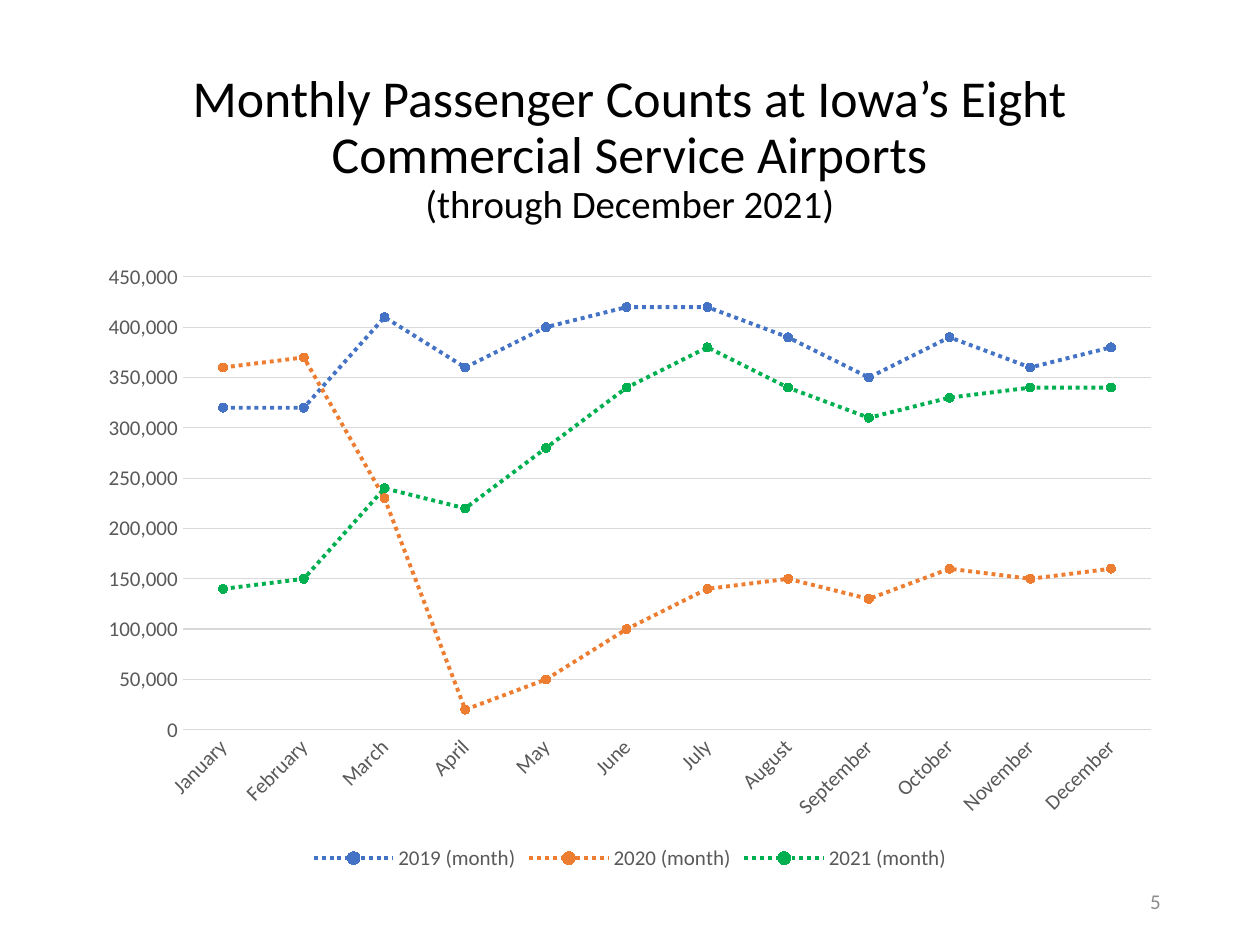
from dataclasses import dataclass

from pptx import Presentation
from pptx.chart.axis import _BaseAxis
from pptx.chart.chart import Chart
from pptx.chart.data import CategoryChartData
from pptx.dml.color import RGBColor
from pptx.enum.chart import (XL_CHART_TYPE, XL_LEGEND_POSITION,
                             XL_MARKER_STYLE, XL_TICK_MARK)
from pptx.enum.dml import MSO_LINE
from pptx.enum.text import MSO_ANCHOR, PP_ALIGN
from pptx.util import Inches, Pt

LINE_MARKERS = XL_CHART_TYPE.LINE_MARKERS
LEGEND_BOTTOM = XL_LEGEND_POSITION.BOTTOM
CIRCLE = XL_MARKER_STYLE.CIRCLE
NO_TICK = XL_TICK_MARK.NONE
DOTTED = MSO_LINE.ROUND_DOT
MIDDLE, BOTTOM = MSO_ANCHOR.MIDDLE, MSO_ANCHOR.BOTTOM
CENTER, RIGHT = PP_ALIGN.CENTER, PP_ALIGN.RIGHT


@dataclass(frozen=True)
class Theme:
    font: str = "Calibri"
    title: str = "000000"
    label: str = "595959"
    grid: str = "D9D9D9"
    number: str = "8C8C8C"
    title_size: float = 29.6
    subtitle_size: float = 22.2
    small_size: float = 12


@dataclass(frozen=True)
class Year:
    name: str
    color: str
    thousands: tuple[int, ...]


@dataclass(frozen=True)
class Line:
    text: str
    size: float
    color: str


THEME = Theme()
LEFT, WIDTH = 0.69, 8.62
MONTHS = ("January", "February", "March", "April", "May", "June", "July",
          "August", "September", "October", "November", "December")
YEARS = (
    Year("2019 (month)", "4472C4",
         (320, 320, 410, 360, 400, 420, 420, 390, 350, 390, 360, 380)),
    Year("2020 (month)", "ED7D31",
         (360, 370, 230, 20, 50, 100, 140, 150, 130, 160, 150, 160)),
    Year("2021 (month)", "00B050",
         (140, 150, 240, 220, 280, 340, 380, 340, 310, 330, 340, 340)),
)


def style_font(font, size: float, color: str) -> None:
    font.name = THEME.font
    font.size = Pt(size)
    font.color.rgb = RGBColor.from_string(color)


def style_line(line, color: str, width: float) -> None:
    line.color.rgb = RGBColor.from_string(color)
    line.width = Pt(width)


def add_text(slide, box: tuple[float, ...], lines: tuple[Line, ...],
             align: PP_ALIGN, anchor: MSO_ANCHOR, spacing: float = 1.0) -> None:
    tf = slide.shapes.add_textbox(*map(Inches, box)).text_frame
    tf.word_wrap = True
    tf.vertical_anchor = anchor
    tf.text = "\n".join(line.text for line in lines)
    for p, line in zip(tf.paragraphs, lines):
        p.alignment = align
        p.line_spacing = spacing
        style_font(p.runs[0].font, line.size, line.color)


def style_axis(axis: _BaseAxis) -> None:
    axis.major_tick_mark = axis.minor_tick_mark = NO_TICK
    style_font(axis.tick_labels.font, THEME.small_size, THEME.label)


def style_series(series, color: str) -> None:
    series.smooth = False
    style_line(series.format.line, color, 2.25)
    series.format.line.dash_style = DOTTED
    marker = series.marker
    marker.style = CIRCLE
    marker.size = 5
    marker.format.fill.solid()
    marker.format.fill.fore_color.rgb = RGBColor.from_string(color)
    style_line(marker.format.line, color, 0.75)


def add_passenger_chart(slide) -> Chart:
    data = CategoryChartData(number_format="#,##0")
    data.categories = MONTHS
    for year in YEARS:
        data.add_series(year.name, [n * 1000 for n in year.thousands])
    box = map(Inches, (LEFT, 2, WIDTH, 4.95))
    chart = slide.shapes.add_chart(LINE_MARKERS, *box, data).chart
    style_font(chart.font, 10, THEME.title)
    chart.has_title = False
    chart.plots[0].vary_by_categories = False

    months, counts = chart.category_axis, chart.value_axis
    style_axis(months)
    style_line(months.format.line, THEME.grid, 0.75)
    # Slant the month names upwards by 45 degrees
    months._element.txPr.bodyPr.set("rot", "-2700000")

    style_axis(counts)
    counts.format.line.fill.background()
    counts.minimum_scale, counts.maximum_scale = 0, 450000
    counts.major_unit = 50000
    counts.tick_labels.number_format = "#,##0"
    counts.tick_labels.number_format_is_linked = False
    counts.has_major_gridlines = True
    style_line(counts.major_gridlines.format.line, THEME.grid, 0.75)

    chart.has_legend = True
    chart.legend.position = LEGEND_BOTTOM
    chart.legend.include_in_layout = False
    style_font(chart.legend.font, THEME.small_size, THEME.label)
    for series, year in zip(chart.series, YEARS):
        style_series(series, year.color)
    return chart


def main() -> None:
    prs = Presentation()
    prs.slide_width, prs.slide_height = Inches(10), Inches(7.5)
    slide = prs.slides.add_slide(prs.slide_layouts[6])
    add_passenger_chart(slide)
    add_text(slide, (7.06, 6.95, 2.25, 0.4),
             (Line("5", THEME.small_size, THEME.number),), RIGHT, MIDDLE)
    title = (
        Line("Monthly Passenger Counts at Iowa’s Eight Commercial Service Airports",
             THEME.title_size, THEME.title),
        Line("(through December 2021)", THEME.subtitle_size, THEME.title),
    )
    add_text(slide, (LEFT, 0.4, WIDTH, 1.45), title, CENTER, BOTTOM, 0.9)
    prs.save("out.pptx")


if __name__ == "__main__":
    main()
